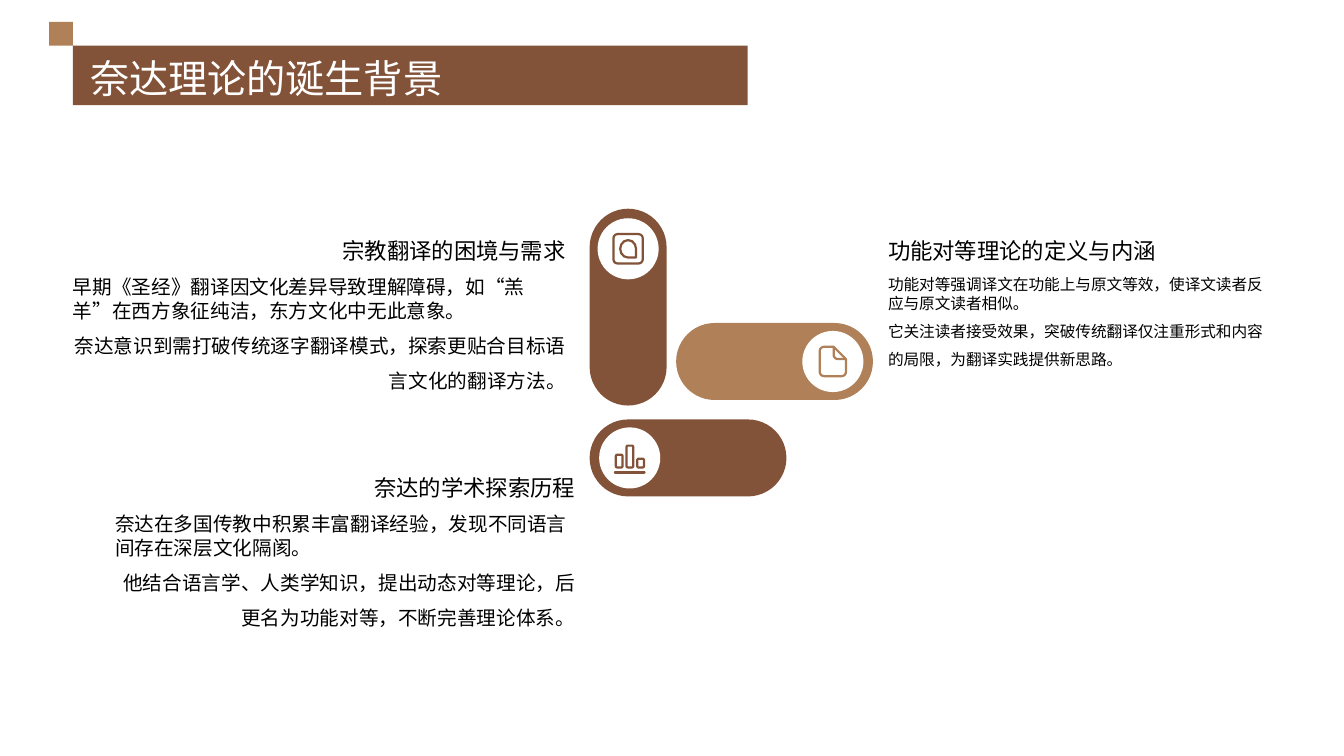
import math

import lxml.etree
import pptx
import pptx.dml.color
import pptx.enum.shapes
import pptx.enum.text
import pptx.oxml.ns
import pptx.util

Cm = pptx.util.Cm
Pt = pptx.util.Pt
SHAPE = pptx.enum.shapes.MSO_SHAPE
ALIGN = pptx.enum.text.PP_ALIGN
ANCHOR = pptx.enum.text.MSO_ANCHOR

FONT = "Noto Sans CJK SC"
BROWN, TAN, WHITE, BLACK = "835339", "B08159", "FFFFFF", "000000"
STROKE = 1.6


def rgb(value):
    return pptx.dml.color.RGBColor.from_string(value)


def paint(shape, fill=None, line=None):
    shape.shadow.inherit = False
    if fill:
        shape.fill.solid()
        shape.fill.fore_color.rgb = rgb(fill)
    else:
        shape.fill.background()
    if line:
        shape.line.color.rgb = rgb(line)
        shape.line.width = Pt(STROKE)
    else:
        shape.line.fill.background()
    return shape


def add_preset(slide, kind, box, fill=None, line=None):
    shape = slide.shapes.add_shape(kind, *(Cm(length) for length in box))
    return paint(shape, fill, line)


def add_outline(slide, points, color, close):
    builder = slide.shapes.build_freeform(Cm(points[0][0]), Cm(points[0][1]))
    builder.add_line_segments([(Cm(x), Cm(y)) for x, y in points[1:]], close=close)
    paint(builder.convert_to_shape(), line=color)


def arc(x, y, radius, start):
    """Quarter turn, clockwise on the slide, from the start angle in degrees."""
    angles = [math.radians(start + step * 15) for step in range(7)]
    return [(x + radius * math.cos(a), y + radius * math.sin(a)) for a in angles]


def add_text(slide, box, paragraphs, color=BLACK, anchor=ANCHOR.TOP):
    """Each paragraph is (text, size, line spacing, alignment)."""
    frame = slide.shapes.add_textbox(*(Cm(length) for length in box)).text_frame
    frame.word_wrap = True
    frame.vertical_anchor = anchor
    frame.margin_left = frame.margin_right = frame.margin_top = frame.margin_bottom = 0
    for index, (text, size, spacing, align) in enumerate(paragraphs):
        paragraph = frame.add_paragraph() if index else frame.paragraphs[0]
        paragraph.text = text
        paragraph.line_spacing = spacing
        paragraph.alignment = align
        font = paragraph.font
        font.name, font.size = FONT, Pt(size)
        font.color.rgb = rgb(color)
        # East Asian typeface
        properties = paragraph._p.pPr.find(pptx.oxml.ns.qn("a:defRPr"))
        lxml.etree.SubElement(properties, pptx.oxml.ns.qn("a:ea"), typeface=FONT)


# Title bar with its corner square
def add_title(slide, left, top, width, height, title):
    square = 0.6
    add_preset(slide, SHAPE.RECTANGLE, (left - square, top - square, square, square), TAN)
    add_preset(slide, SHAPE.RECTANGLE, (left, top, width, height), BROWN)
    add_text(slide, (left + 0.43, top + 0.1, 29.72, height - 0.2),
             [(title, 28, 1.1, ALIGN.LEFT)], WHITE, ANCHOR.MIDDLE)


# Heading above two paragraphs of body text
def add_topic(slide, left, top, width, heading, intro, detail, size, align):
    add_text(slide, (left, top, width, 1.55),
             [(heading, 16, 1.3, align)], anchor=ANCHOR.BOTTOM)
    add_text(slide, (left, top + 1.83, width, 3.15),
             [(intro, size, 1.0, ALIGN.LEFT), (detail, size, 1.5, align)])


# Icons, each drawn in a square box
def add_pen_icon(slide, left, top, size, color):
    edge = 0.03
    side = size - 2 * edge
    frame = add_preset(slide, SHAPE.ROUNDED_RECTANGLE,
                       (left + edge, top + edge, side, side), line=color)
    frame.adjustments[0] = 0.14
    nib = add_preset(slide, SHAPE.TEAR,
                     (left + 0.2, top + 0.18, size - 0.4, size - 0.36), line=color)
    nib.rotation = 180
    # The tip points down and to the left
    nib._element.spPr.xfrm.set("flipH", "1")


def add_page_icon(slide, left, top, size, color):
    radius = 0.11
    x1, x2 = left + 0.07, left + size - 0.07
    y1, y2 = top + 0.03, top + size - 0.03
    fold_x, fold_y = x2 - 0.31, y1 + 0.31
    page = [(fold_x, y1), (x2, fold_y)]
    page += arc(x2 - radius, y2 - radius, radius, 0)
    page += arc(x1 + radius, y2 - radius, radius, 90)
    page += arc(x1 + radius, y1 + radius, radius, 180)
    add_outline(slide, page, color, close=True)
    corner = arc(fold_x + radius, fold_y - radius, radius, 90)[::-1]
    add_outline(slide, [(fold_x, y1), *corner, (x2, fold_y)], color, close=False)


def add_chart_icon(slide, left, top, size, color):
    bar_width, step, base = 0.17, 0.27, top + 0.64
    for index, height in enumerate((0.32, 0.55, 0.22)):
        bar = add_preset(slide, SHAPE.ROUNDED_RECTANGLE,
                         (left + 0.05 + index * step, base - height, bar_width, height),
                         line=color)
        bar.adjustments[0] = 0.2
    axis = add_preset(slide, SHAPE.ROUNDED_RECTANGLE,
                      (left, top + 0.73, size, 0.07), color)
    axis.adjustments[0] = 0.5


# Pill with a white disc and an icon at one end
def add_pill(slide, left, top, width, height, color, add_icon, at_far_end=False):
    pill = add_preset(slide, SHAPE.ROUNDED_RECTANGLE, (left, top, width, height), color)
    pill.adjustments[0] = 0.5
    disc, inset, icon = 1.54, 0.24, 0.8
    across = (min(width, height) - disc) / 2
    dx, dy = (inset, across) if width > height else (across, inset)
    if at_far_end:
        dx = width - disc - inset
    add_preset(slide, SHAPE.OVAL, (left + dx, top + dy, disc, disc), WHITE)
    margin = (disc - icon) / 2
    add_icon(slide, left + dx + margin, top + dy + margin, icon, color)


def main():
    deck = pptx.Presentation()
    deck.slide_width, deck.slide_height = Cm(33.87), Cm(19.05)
    slide = deck.slides.add_slide(deck.slide_layouts[6])

    add_title(slide, 1.84, 1.15, 17.0, 1.5, "奈达理论的诞生背景")

    long, short = 4.96, 1.94
    add_pill(slide, 14.86, 10.57, long, short, BROWN, add_chart_icon)
    add_pill(slide, 17.04, 8.14, long, short, TAN, add_page_icon, at_far_end=True)
    add_pill(slide, 14.86, 5.26, short, long, BROWN, add_pen_icon)

    add_topic(slide, 1.84, 5.1, 12.42, "宗教翻译的困境与需求",
              "早期《圣经》翻译因文化差异导致理解障碍，如“羔羊”在西方象征纯洁，东方文化中无此意象。",
              "奈达意识到需打破传统逐字翻译模式，探索更贴合目标语言文化的翻译方法。",
              14, ALIGN.RIGHT)
    add_topic(slide, 2.9, 11.08, 11.6, "奈达的学术探索历程",
              "奈达在多国传教中积累丰富翻译经验，发现不同语言间存在深层文化隔阂。",
              "他结合语言学、人类学知识，提出动态对等理论，后更名为功能对等，不断完善理论体系。",
              14, ALIGN.RIGHT)
    add_topic(slide, 22.38, 5.1, 9.65, "功能对等理论的定义与内涵",
              "功能对等强调译文在功能上与原文等效，使译文读者反应与原文读者相似。",
              "它关注读者接受效果，突破传统翻译仅注重形式和内容的局限，为翻译实践提供新思路。",
              11.2, ALIGN.LEFT)

    deck.save("out.pptx")


if __name__ == "__main__":
    main()
